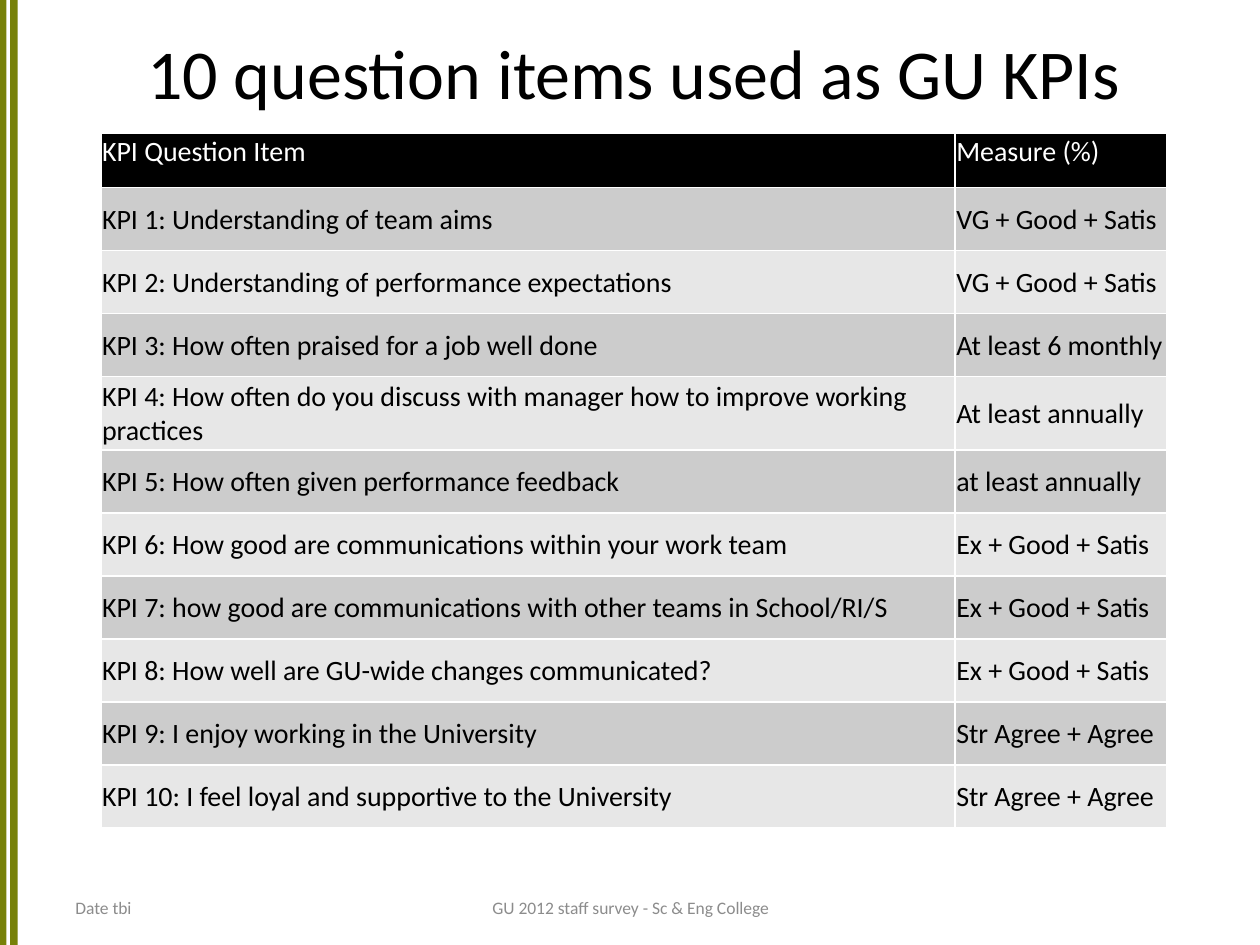
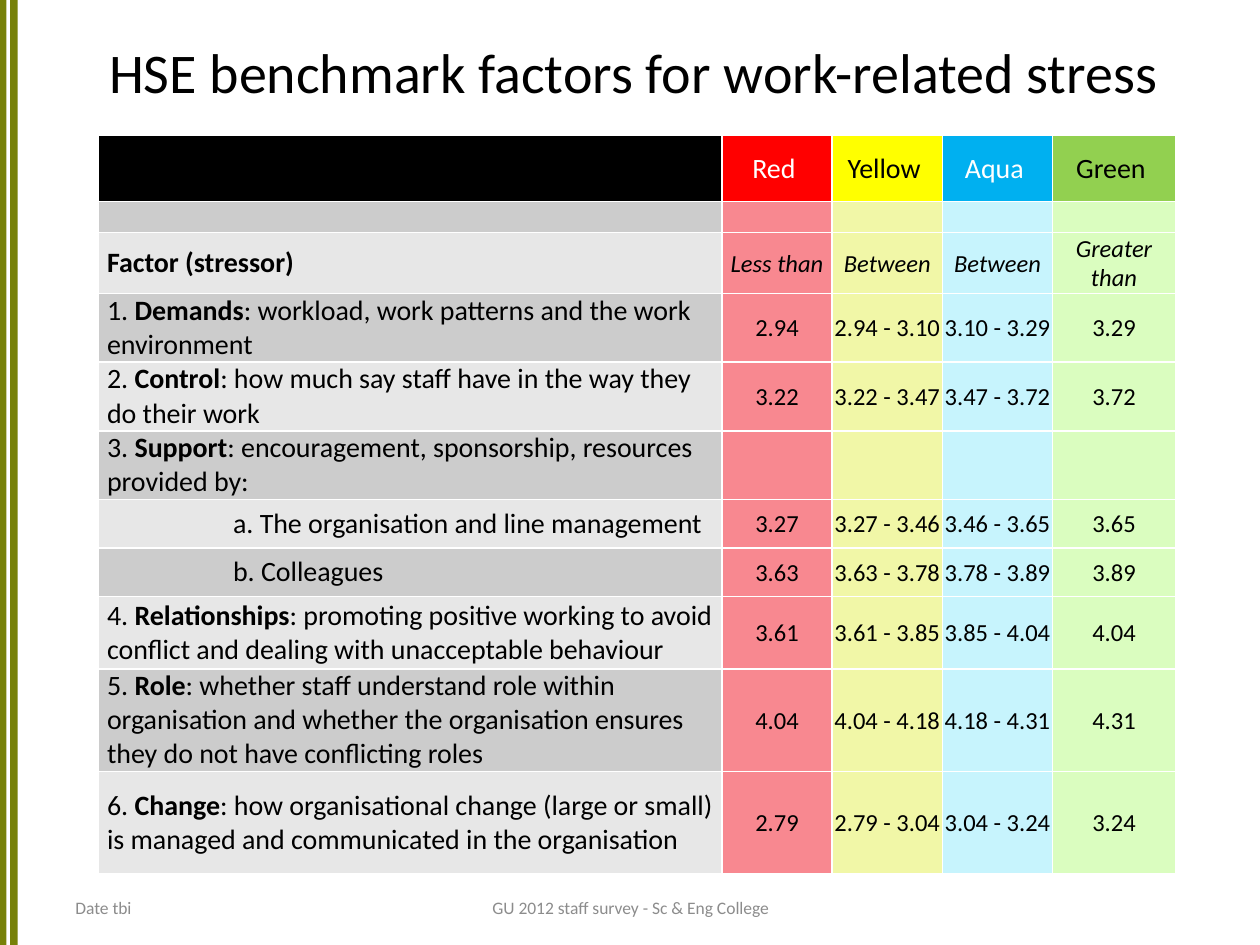
from lxml.etree import SubElement
from pptx import Presentation
from pptx.dml.color import RGBColor
from pptx.enum.shapes import MSO_SHAPE
from pptx.enum.text import MSO_ANCHOR, PP_ALIGN
from pptx.oxml import parse_xml
from pptx.oxml.ns import nsdecls, qn
from pptx.util import Inches, Pt

BLACK = RGBColor(0x00, 0x00, 0x00)
WHITE = RGBColor(0xFF, 0xFF, 0xFF)
OLIVE = RGBColor(0x77, 0x81, 0x09)
FOOTER_GREY = RGBColor(0x8C, 0x8C, 0x8C)
DARK_BAND = RGBColor(0xCC, 0xCC, 0xCC)
LIGHT_BAND = RGBColor(0xE7, 0xE7, 0xE7)
RED = RGBColor(0xFF, 0x00, 0x00)
YELLOW = RGBColor(0xFF, 0xFF, 0x00)
AQUA = RGBColor(0x00, 0xB0, 0xF0)
GREEN = RGBColor(0x92, 0xD0, 0x50)
PALE_RED = RGBColor(0xF8, 0x88, 0x90)
PALE_YELLOW = RGBColor(0xF1, 0xF7, 0xA7)
PALE_AQUA = RGBColor(0xC7, 0xF4, 0xFD)
PALE_GREEN = RGBColor(0xDA, 0xFD, 0xBF)

FONT = "Calibri"
WIDTH, HEIGHT = Inches(10), Inches(7.5)
UNIT = WIDTH // 100
LEFT, CENTER = PP_ALIGN.LEFT, PP_ALIGN.CENTER


def span(units):
    return round(units * UNIT)


def write(frame, text, size, color, align=LEFT, italic=False):
    paragraph = frame.paragraphs[0]
    paragraph.alignment = align
    if not text:
        SubElement(paragraph._p, qn("a:endParaRPr"), sz=str(size * 100))
        return
    for position, part in enumerate(text.split("*")):
        if part:
            run = paragraph.add_run()
            run.text = part
            run.font.color.rgb = color
            look = {"name": FONT, "size": Pt(size), "bold": position % 2 == 1, "italic": italic}
            for attribute, value in look.items():
                setattr(run.font, attribute, value)


kpi_rows = [
    ("KPI Question Item", "Measure (%)"),
    ("KPI 1: Understanding of team aims", "VG + Good + Satis"),
    ("KPI 2: Understanding of performance expectations", "VG + Good + Satis"),
    ("KPI 3: How often praised for a job well done", "At least 6 monthly"),
    ("KPI 4: How often do you discuss with manager how to improve working practices",
     "At least annually"),
    ("KPI 5: How often given performance feedback", "at least annually"),
    ("KPI 6: How good are communications within your work team", "Ex + Good + Satis"),
    ("KPI 7: how good are communications with other teams in School/RI/S",
     "Ex + Good + Satis"),
    ("KPI 8: How well are GU-wide changes communicated?", "Ex + Good + Satis"),
    ("KPI 9: I enjoy working in the University", "Str Agree + Agree"),
    ("KPI 10: I feel loyal and supportive to the University", "Str Agree + Agree"),
]

stress_rows = [
    ("", "Red ", "Yellow ", "Aqua ", "Green "),
    ("", "", "", "", ""),
    ("*Factor (stressor)*", "Less than", "Between", "Between", "Greater than"),
]
stressors = [
    ("1. *Demands*: workload, work patterns and the work environment",
     ("2.94", "3.10", "3.29")),
    ("2. *Control*: how much say staff have in the way they do their work",
     ("3.22", "3.47", "3.72")),
    ("3. *Support*: encouragement, sponsorship, resources provided by:", None),
    ("a. The organisation and line management", ("3.27", "3.46", "3.65")),
    ("b. Colleagues", ("3.63", "3.78", "3.89")),
    ("4. *Relationships*: promoting positive working to avoid conflict and dealing "
     "with unacceptable behaviour", ("3.61", "3.85", "4.04")),
    ("5. *Role*: whether staff understand role within organisation and whether the "
     "organisation ensures they do not have conflicting roles", ("4.04", "4.18", "4.31")),
    ("6. *Change*: how organisational change (large or small) is managed and "
     "communicated in the organisation", ("2.79", "3.04", "3.24")),
]
for factor, limits in stressors:
    if limits:
        low, middle, high = limits
        stress_rows.append((factor, low, f"{low} - {middle}", f"{middle} - {high}", high))
    else:
        stress_rows.append((factor, "", "", "", ""))

pages = [
    {
        "title": "10 question items used as GU KPIs", "title_size": 40,
        "rows": kpi_rows, "left": 8, "top": 10.6,
        "columns": [67.8, 16.8], "heights": [4.3] + [5] * 3 + [5.8] + [5] * 6,
        "header_fills": [BLACK, BLACK], "header_colors": [WHITE, WHITE],
        "rated": False,
    },
    {
        "title": "HSE benchmark factors for work-related stress", "title_size": 32,
        "rows": stress_rows, "left": 7.8, "top": 10.7,
        "columns": [49.5, 8.75, 8.75, 8.75, 9.75],
        "heights": [5.3, 2.45, 4.85, 5.45, 5.45, 5.45, 3.85, 3.85, 5.75, 8.15, 8.15],
        "header_fills": [BLACK, RED, YELLOW, AQUA, GREEN],
        "header_colors": [WHITE, WHITE, BLACK, WHITE, BLACK],
        "rated": True,
    },
]
rating_fills = [PALE_RED, PALE_YELLOW, PALE_AQUA, PALE_GREEN]

deck = Presentation()
deck.slide_width, deck.slide_height = WIDTH, HEIGHT

for page in pages:
    slide = deck.slides.add_slide(deck.slide_layouts[6])

    for bar_left, bar_width in ((0.8, 0.6), (0, 0.5)):
        bar = slide.shapes.add_shape(
            MSO_SHAPE.RECTANGLE, span(bar_left), 0, span(bar_width), HEIGHT)
        bar.shadow.inherit = False
        bar.fill.solid()
        bar.fill.fore_color.rgb = OLIVE
        bar.line.fill.background()

    captions = [
        (page["title"], (5, 1.3, 90.6, 8.7), page["title_size"], BLACK, CENTER),
        ("Date tbi", (5, 70.6, 23.3, 2.9), 10, FOOTER_GREY, LEFT),
        ("GU 2012 staff survey - Sc & Eng College", (34.2, 70.6, 31.7, 2.9), 10,
         FOOTER_GREY, CENTER),
    ]
    for text, box, size, color, align in captions:
        frame = slide.shapes.add_textbox(*map(span, box)).text_frame
        frame.word_wrap = True
        frame.vertical_anchor = MSO_ANCHOR.MIDDLE
        write(frame, text, size, color, align)

    rows, columns, heights = page["rows"], page["columns"], page["heights"]
    rated = page["rated"]
    table = slide.shapes.add_table(
        len(rows), len(columns), span(page["left"]), span(page["top"]),
        span(sum(columns)), span(sum(heights))).table
    table.horz_banding = False
    for column, width in zip(table.columns, columns):
        column.width = span(width)
    for row, height in zip(table.rows, heights):
        row.height = span(height)

    for r, texts in enumerate(rows):
        for c, text in enumerate(texts):
            cell = table.cell(r, c)
            header, rating, factor = r == 0, rated and c > 0, rated and c == 0
            subfactor = factor and text.startswith(("a.", "b."))
            side = 0.7 if factor else 0.1
            layout = {
                "margin_left": span(side + 10 if subfactor else side),
                "margin_right": span(0.4 if factor else side),
                "margin_top": span(0 if factor or not text else 0.1),
                "margin_bottom": 0,
                "vertical_anchor": MSO_ANCHOR.TOP if header and not rated else MSO_ANCHOR.MIDDLE,
            }
            for attribute, value in layout.items():
                setattr(cell, attribute, value)

            for edge in ("lnL", "lnR", "lnT", "lnB"):
                cell._tc.get_or_add_tcPr().append(parse_xml(
                    f'<a:{edge} {nsdecls("a")} w="{Pt(1)}"><a:solidFill>'
                    f'<a:srgbClr val="{WHITE}"/></a:solidFill></a:{edge}>'))
            if header:
                fill = page["header_fills"][c]
            elif rating:
                fill = rating_fills[c - 1]
            else:
                fill = DARK_BAND if r % 2 else LIGHT_BAND
            cell.fill.solid()
            cell.fill.fore_color.rgb = fill

            small = not text or (rating and not header)
            write(cell.text_frame, text, 14 if small else 16,
                  page["header_colors"][c] if header else BLACK,
                  CENTER if rating else LEFT, rating and r == 2)

deck.save("out.pptx")
